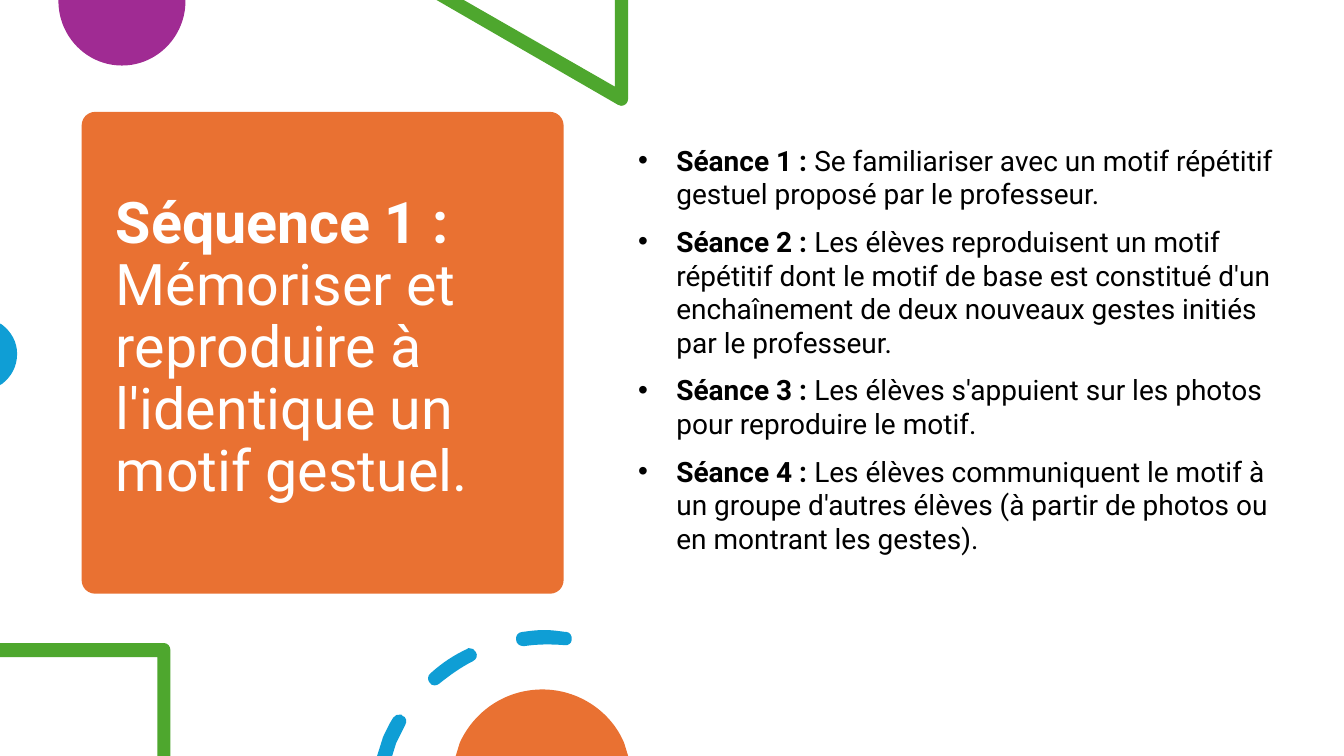
from lxml import etree
from pptx import Presentation
from pptx.dml.color import RGBColor
from pptx.enum.shapes import MSO_SHAPE
from pptx.enum.text import MSO_ANCHOR
from pptx.oxml.ns import qn
from pptx.util import Inches, Pt

ROUNDED = MSO_SHAPE.ROUNDED_RECTANGLE
MIDDLE = MSO_ANCHOR.MIDDLE
FONT = "Roboto"
ORANGE, PURPLE, GREEN, BLUE = "E97132", "A02B93", "4EA72E", "0F9ED5"


def paint(shape, color):
    shape.fill.solid()
    shape.fill.fore_color.rgb = RGBColor.from_string(color)
    shape.line.fill.background()
    shape.shadow.inherit = False


def add_run(paragraph, text, size, color, bold):
    run = paragraph.add_run()
    run.text = text
    run.font.name = FONT
    run.font.size = Pt(size)
    run.font.bold = bold
    run.font.color.rgb = RGBColor.from_string(color)


prs = Presentation()
prs.slide_width = Inches(13.33)
prs.slide_height = Inches(7.5)
slide = prs.slides.add_slide(prs.slide_layouts[6])

card = slide.shapes.add_shape(
    ROUNDED, Inches(0.81), Inches(1.11), Inches(4.78), Inches(4.78))
card.adjustments[0] = 0.028
paint(card, ORANGE)

purple_disc = [[(1.84, 0), (0.58, 0), (0.58, 0.01),
                (0.58, 0.36, 0.86, 0.65, 1.21, 0.65),
                (1.56, 0.65, 1.84, 0.36, 1.84, 0.01)]]
green_triangle = [[(6.23, 0), (6.1, 0), (6.1, 0.86), (4.6, 0), (4.33, 0),
                   (6.13, 1.04), (6.14, 1.05, 6.15, 1.05, 6.16, 1.05),
                   (6.2, 1.05, 6.23, 1.02, 6.23, 0.98)]]
blue_disc = [[(0, 3.21), (0, 3.82), (0.02, 3.81),
              (0.11, 3.74, 0.17, 3.64, 0.17, 3.51),
              (0.17, 3.39, 0.11, 3.29, 0.02, 3.22)]]
green_square = [[(1.63, 6.38), (0, 6.38), (0, 6.52), (1.56, 6.52),
                 (1.56, 7.5), (1.69, 7.5), (1.69, 6.45),
                 (1.69, 6.41, 1.66, 6.38, 1.63, 6.38)]]
blue_dashes = [
    [(3.97, 7.09), (3.94, 7.08, 3.92, 7.1, 3.9, 7.12),
     (3.86, 7.18, 3.83, 7.25, 3.8, 7.31), (3.74, 7.5), (3.89, 7.5),
     (3.93, 7.37), (3.96, 7.31, 3.99, 7.25, 4.02, 7.19),
     (4.04, 7.16, 4.03, 7.11, 3.99, 7.1),
     (3.99, 7.09, 3.98, 7.09, 3.97, 7.09)],
    [(4.65, 6.43), (4.65, 6.43, 4.64, 6.43, 4.63, 6.44),
     (4.5, 6.5, 4.38, 6.58, 4.27, 6.68),
     (4.24, 6.7, 4.24, 6.75, 4.26, 6.77),
     (4.27, 6.79, 4.29, 6.8, 4.31, 6.8),
     (4.33, 6.8, 4.35, 6.79, 4.36, 6.78),
     (4.46, 6.7, 4.57, 6.62, 4.69, 6.56),
     (4.73, 6.54, 4.74, 6.5, 4.72, 6.47),
     (4.71, 6.44, 4.68, 6.43, 4.65, 6.43)],
    [(5.4, 6.25), (5.32, 6.25, 5.25, 6.26, 5.18, 6.27),
     (5.14, 6.27, 5.11, 6.31, 5.12, 6.35),
     (5.12, 6.38, 5.15, 6.41, 5.19, 6.41),
     (5.19, 6.41, 5.19, 6.41, 5.2, 6.41),
     (5.33, 6.39, 5.46, 6.39, 5.6, 6.4),
     (5.63, 6.41, 5.67, 6.38, 5.67, 6.35),
     (5.68, 6.31, 5.65, 6.27, 5.62, 6.27),
     (5.62, 6.27, 5.61, 6.27, 5.61, 6.27),
     (5.54, 6.26, 5.47, 6.25, 5.4, 6.25)],
]
orange_disc = [[(5.38, 6.84), (5.01, 6.84, 4.7, 7.06, 4.56, 7.37),
                (4.52, 7.5), (6.23, 7.5), (6.19, 7.37),
                (6.06, 7.06, 5.74, 6.84, 5.38, 6.84)]]

for contours, color in [(purple_disc, PURPLE), (green_triangle, GREEN),
                        (blue_disc, BLUE), (green_square, GREEN),
                        (blue_dashes, BLUE), (orange_disc, ORANGE)]:
    start_x, start_y = contours[0][0]
    builder = slide.shapes.build_freeform(Inches(start_x), Inches(start_y))
    segments = []
    for index, contour in enumerate(contours):
        if index:
            builder.move_to(*map(Inches, contour[0]))
        builder.add_line_segments(
            [tuple(map(Inches, segment[-2:])) for segment in contour[1:]])
        segments += contour[1:]
    decoration = builder.convert_to_shape()
    edges = list(decoration._element.iter(qn("a:lnTo")))
    for edge, segment in zip(edges, segments):
        if len(segment) == 6:
            edge.tag = qn("a:cubicBezTo")
            for position in (0, 1):
                x, y = segment[2 * position:2 * position + 2]
                control = etree.Element(
                    qn("a:pt"), x=str(Inches(x) - decoration.left),
                    y=str(Inches(y) - decoration.top))
                edge.insert(position, control)
    paint(decoration, color)

title = slide.shapes.add_textbox(
    Inches(1.05), Inches(1.22), Inches(4.31), Inches(4.56)).text_frame
title.word_wrap = True
title.vertical_anchor = MIDDLE
title.margin_bottom = Inches(0.13)
heading = title.paragraphs[0]
heading.line_spacing = 0.9
add_run(heading, "Séquence 1 : ", 41, "FFFFFF", True)
add_run(heading, "Mémoriser et reproduire à l'identique un motif gestuel.",
        41, "FFFFFF", False)

sessions = [
    "Se familiariser avec un motif répétitif gestuel proposé par le professeur.",
    "Les élèves reproduisent un motif répétitif dont le motif de base est "
    "constitué d'un enchaînement de deux nouveaux gestes initiés par le professeur.",
    "Les élèves s'appuient sur les photos pour reproduire le motif.",
    "Les élèves communiquent le motif à un groupe d'autres élèves "
    "(à partir de photos ou en montrant les gestes).",
]
body = slide.shapes.add_textbox(
    Inches(6.23), Inches(0.9), Inches(6.73), Inches(5.35)).text_frame
body.word_wrap = True
body.margin_top = Inches(0.52)
for number, description in enumerate(sessions, 1):
    session = body.paragraphs[0] if number == 1 else body.add_paragraph()
    session.space_before = Pt(10)
    properties = session._p.get_or_add_pPr()
    properties.set("marL", str(Inches(0.38)))
    properties.set("indent", str(-Inches(0.38)))
    etree.SubElement(properties, qn("a:buFont"), typeface="Arial")
    etree.SubElement(properties, qn("a:buChar"), char="•")
    add_run(session, f"Séance {number} :", 20, "000000", True)
    add_run(session, f" {description}", 20, "000000", False)

prs.save("out.pptx")
